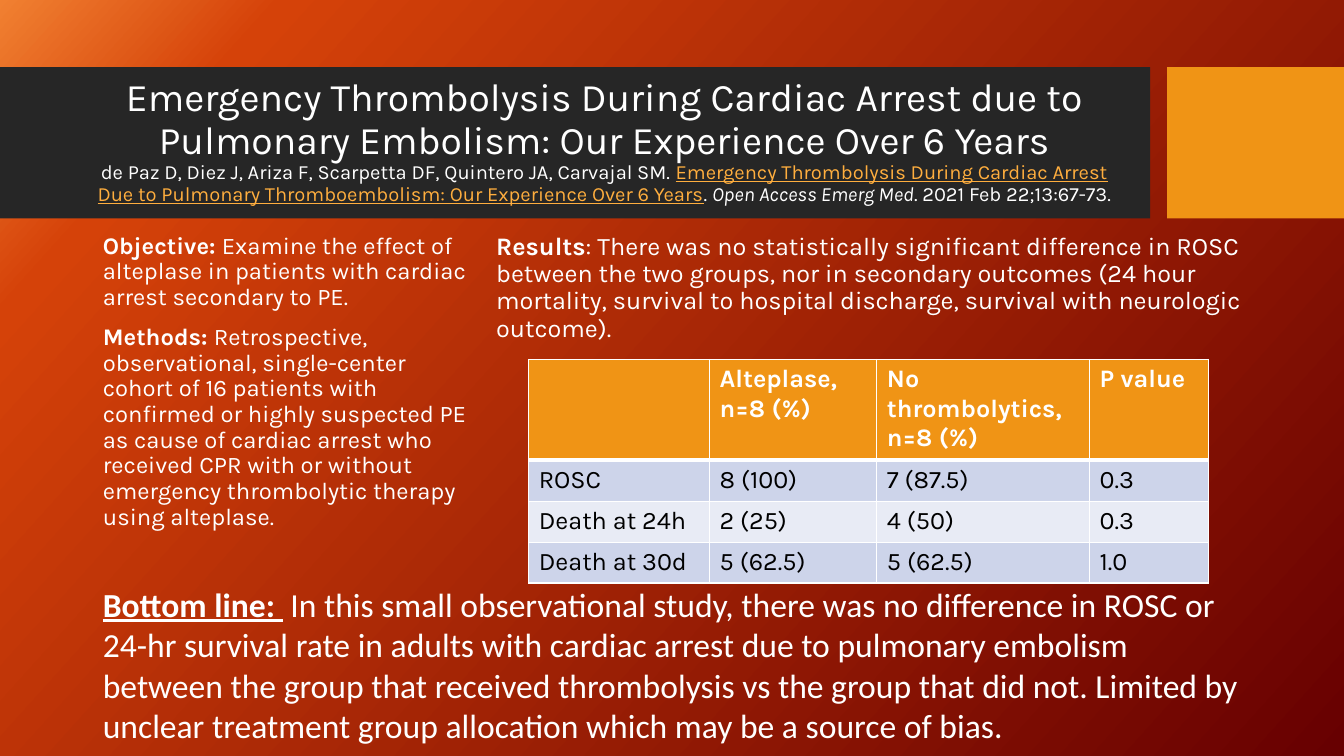
"""Builds the slide on thrombolysis during cardiac arrest."""
from copy import deepcopy

from lxml import etree
from pptx import Presentation
from pptx.dml.color import RGBColor
from pptx.enum import shapes, text
from pptx.oxml.ns import qn
from pptx.util import Pt

WHITE = RGBColor(0xFF, 0xFF, 0xFF)
BLACK = RGBColor(0, 0, 0)
CHARCOAL = RGBColor(0x26, 0x26, 0x26)
ORANGE = RGBColor(0xF0, 0x94, 0x15)
LINK = RGBColor(0xFF, 0xAE, 0x3E)
BAND_DARK = RGBColor(0xCD, 0xD4, 0xEA)
BAND_LIGHT = RGBColor(0xE8, 0xEB, 0xF5)
GLOW = [(0, RGBColor(0xF1, 0x80, 0x31)),
        (0.14, RGBColor(0xD5, 0x42, 0x09)),
        (1, RGBColor(0x67, 0x00, 0x01))]


def write(p, words, size=18, font="Karla", color=WHITE, bold=False, italic=False, underline=False):
    r = p.add_run()
    r.text = words
    f = r.font
    f.size, f.name, f.bold, f.italic, f.underline = Pt(size), font, bold, italic, underline
    f.color.rgb = color


def set_border(cell, side, width):
    ln = etree.SubElement(cell._tc.get_or_add_tcPr(), qn(f"a:ln{side}"), w=str(Pt(width)))
    fill = etree.SubElement(ln, qn("a:solidFill"))
    etree.SubElement(fill, qn("a:srgbClr"), val=str(WHITE))


prs = Presentation()
prs.slide_width, prs.slide_height = Pt(960), Pt(540)
s = prs.slides.add_slide(prs.slide_layouts[5])

bg = s.background.fill
bg.gradient()
bg.gradient_angle = 318
stop_list = s._element.xpath(".//a:gsLst")[0]
stop_list.append(deepcopy(stop_list[-1]))
for stop, (position, color) in zip(bg.gradient_stops, GLOW):
    stop.position = position
    stop.color.rgb = color

for left, width, color in [(0, 821.5, CHARCOAL), (833.75, 126.25, ORANGE)]:
    sp = s.shapes.add_shape(shapes.MSO_SHAPE.RECTANGLE, Pt(left), Pt(48), Pt(width), Pt(108))
    sp.shadow.inherit = False
    sp.fill.solid()
    sp.fill.fore_color.rgb = color
    sp.line.fill.background()

title = s.shapes.title
title.left, title.top, title.width, title.height = Pt(53.3), Pt(59), Pt(756.7), Pt(85)
s.shapes._spTree.append(title._element)
tf = title.text_frame
tf.word_wrap = True
tf.auto_size = text.MSO_AUTO_SIZE.NONE
tf.vertical_anchor = text.MSO_ANCHOR.MIDDLE
p = tf.paragraphs[0]
p.alignment = text.PP_ALIGN.CENTER
p.line_spacing = 0.9
write(p, "Emergency Thrombolysis During Cardiac Arrest due to Pulmonary Embolism: "
         "Our Experience Over 6 Years", size=27.9)
p.add_line_break()
for words, style in [
    ("de Paz D, Diez J, Ariza F, Scarpetta DF, Quintero JA, Carvajal SM. ", {}),
    ("Emergency Thrombolysis During Cardiac Arrest Due to Pulmonary Thromboembolism: "
     "Our Experience Over 6 Years", {"color": LINK, "underline": True}),
    (". ", {}),
    ("Open Access Emerg Med", {"italic": True}),
    (". 2021 Feb 22;13:67-73.", {}),
]:
    write(p, words, size=14.4, **style)

SECTIONS = [
    ((66.4, 163.4, 281.5, 250.6), 0.9, {"size": 17}, [
        ("Objective: ", "Examine the effect of alteplase in patients with cardiac arrest "
         "secondary to PE."),
        ("Methods: ", "Retrospective, observational, single-center cohort of 16 patients with "
         "confirmed or highly suspected PE as cause of cardiac arrest who received CPR with or "
         "without emergency thrombolytic therapy using alteplase.")]),
    ((347.3, 163.4, 546.5, 250.6), 0.9, {"size": 18}, [
        ("Results", ": There was no statistically significant difference in ROSC between the two "
         "groups, nor in secondary outcomes (24 hour mortality, survival to hospital discharge, "
         "survival with neurologic outcome).")]),
    ((66.4, 413.5, 828, 123.8), 1, {"size": 24, "font": "Calibri"}, [
        ("Bottom line: ", " In this small observational study, there was no difference in ROSC or "
         "24-hr survival rate in adults with cardiac arrest due to pulmonary embolism between the "
         "group that received thrombolysis vs the group that did not. Limited by unclear "
         "treatment group allocation which may be a source of bias.")]),
]
for box, spacing, style, paragraphs in SECTIONS:
    tf = s.shapes.add_textbox(*map(Pt, box)).text_frame
    tf.word_wrap = True
    for i, (label, words) in enumerate(paragraphs):
        p = tf.add_paragraph() if i else tf.paragraphs[0]
        p.line_spacing = spacing
        if i:
            p.space_before = Pt(10)
        write(p, label, bold=True, underline=label.startswith("Bottom"), **style)
        write(p, words, **style)

ROWS = [
    ("", "Alteplase, n=8 (%)", "No thrombolytics, n=8 (%)", "P value"),
    ("ROSC", "8 (100)", "7 (87.5)", "0.3"),
    ("Death at 24h", "2 (25)", "4 (50)", "0.3"),
    ("Death at 30d", "5 (62.5)", "5 (62.5)", "1.0"),
]
COLUMN_WIDTHS = [129.2, 119.5, 151.9, 85]
ROW_HEIGHTS = [72, 29.2, 29.2, 29.2]
table = s.shapes.add_table(4, 4, Pt(377.7), Pt(256.8), Pt(sum(COLUMN_WIDTHS)),
                           Pt(sum(ROW_HEIGHTS))).table
for column, width in zip(table.columns, COLUMN_WIDTHS):
    column.width = Pt(width)
for i, (row, height) in enumerate(zip(table.rows, ROW_HEIGHTS)):
    row.height = Pt(height)
    header = i == 0
    for cell, words in zip(row.cells, ROWS[i]):
        for side, width in [("L", 1), ("R", 1), ("T", 3 if i == 1 else 1), ("B", 3 if header else 1)]:
            set_border(cell, side, width)
        cell.fill.solid()
        cell.fill.fore_color.rgb = ORANGE if header else BAND_DARK if i % 2 else BAND_LIGHT
        if words:
            write(cell.text_frame.paragraphs[0], words, color=WHITE if header else BLACK, bold=header)

prs.save("out.pptx")
